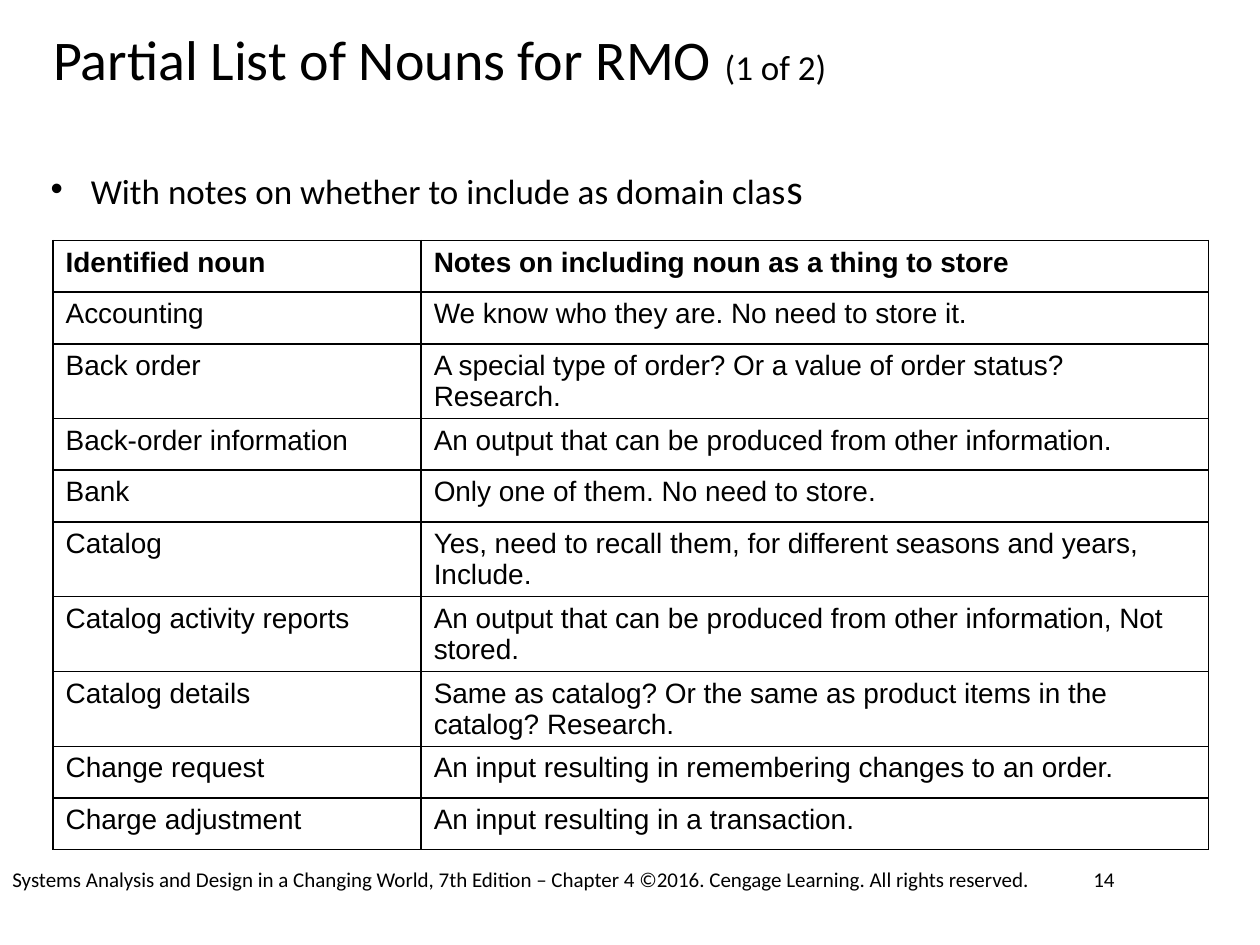
from lxml import etree
from pptx import Presentation
from pptx.dml.color import RGBColor
from pptx.enum.text import MSO_ANCHOR, PP_ALIGN
from pptx.oxml.ns import qn
from pptx.util import Cm, Pt

TOP = MSO_ANCHOR.TOP
LEFT = PP_ALIGN.LEFT
BLACK = "000000"
WHITE = "FFFFFF"

NOUNS = [
    ("Identified noun", "Notes on including noun as a thing to store"),
    ("Accounting", "We know who they are. No need to store it."),
    ("Back order", "A special type of order? Or a value of order status? Research."),
    ("Back-order information", "An output that can be produced from other information."),
    ("Bank", "Only one of them. No need to store."),
    ("Catalog", "Yes, need to recall them, for different seasons and years, Include."),
    ("Catalog activity reports",
     "An output that can be produced from other information, Not stored."),
    ("Catalog details",
     "Same as catalog? Or the same as product items in the catalog? Research."),
    ("Change request", "An input resulting in remembering changes to an order."),
    ("Charge adjustment", "An input resulting in a transaction."),
]


def add_span(para, text, size, font="Calibri", bold=False, color=BLACK):
    span = para.add_run()
    span.text = text
    span.font.size = Pt(size)
    span.font.name = font
    span.font.bold = bold
    span.font.color.rgb = RGBColor.from_string(color)


def place(box, left, top, width, height):
    """Set the position in centimetres and return the first paragraph."""
    box.left, box.top, box.width, box.height = map(Cm, (left, top, width, height))
    frame = box.text_frame
    frame.word_wrap = True
    frame.vertical_anchor = TOP
    para = frame.paragraphs[0]
    para.alignment = LEFT
    return para


deck = Presentation()
deck.slide_width = Cm(25.4)
deck.slide_height = Cm(19.05)
page = deck.slides.add_slide(deck.slide_layouts[1])
title, body = page.placeholders

# Title and bullet
title_para = place(title, 1.07, 0.64, 23.29, 1.22)
body_para = place(body, 1.02, 3.4, 23.29, 1.04)
for box in (title, body):
    frame = box.text_frame
    frame.margin_left = frame.margin_right = frame.margin_top = frame.margin_bottom = 0
    frame.paragraphs[0].line_spacing = 0.9
    frame.paragraphs[0].space_before = Pt(0)

add_span(title_para, "Partial List of Nouns for RMO ", 32)
add_span(title_para, "(1 of 2)", 20)

bullet_props = body_para._p.get_or_add_pPr()
bullet_props.set("marL", str(Cm(0.81)))
bullet_props.set("indent", str(-Cm(0.81)))
etree.SubElement(bullet_props, qn("a:buFont"), typeface="Arial")
etree.SubElement(bullet_props, qn("a:buChar"), char="•")
add_span(body_para, "With notes on whether to include as domain clas", 20)
add_span(body_para, "s", 24)

# Noun table
table = page.shapes.add_table(
    len(NOUNS), 2, Cm(1.07), Cm(4.85), Cm(23.29), Cm(10.4)).table
table.first_row = False
table.horz_banding = False
table.columns[0].width = Cm(7.42)
table.columns[1].width = Cm(15.87)

for row_index, texts in enumerate(NOUNS):
    table.rows[row_index].height = Cm(1.04)
    for column_index, text in enumerate(texts):
        cell = table.cell(row_index, column_index)
        add_span(cell.text_frame.paragraphs[0], text, 16,
                 font="Arial", bold=row_index == 0)
        cell_props = cell._tc.get_or_add_tcPr()
        for side in ("a:lnL", "a:lnR", "a:lnT", "a:lnB"):
            border = etree.SubElement(cell_props, qn(side), w=str(Pt(1)))
            line_fill = etree.SubElement(border, qn("a:solidFill"))
            etree.SubElement(line_fill, qn("a:srgbClr"), val=BLACK)
        cell.fill.solid()
        cell.fill.fore_color.rgb = RGBColor.from_string(WHITE)

# Page number and footer
FOOTERS = [
    (21.79, 2.34, "14"),
    (0, 21.39, "Systems Analysis and Design in a Changing World, 7th Edition – "
               "Chapter 4 ©2016. Cengage Learning. All rights reserved."),
]
for left, width, text in FOOTERS:
    box = page.shapes.add_textbox(0, 0, 0, 0)
    add_span(place(box, left, 17.35, width, 1.27), text, 12)

deck.save("out.pptx")
